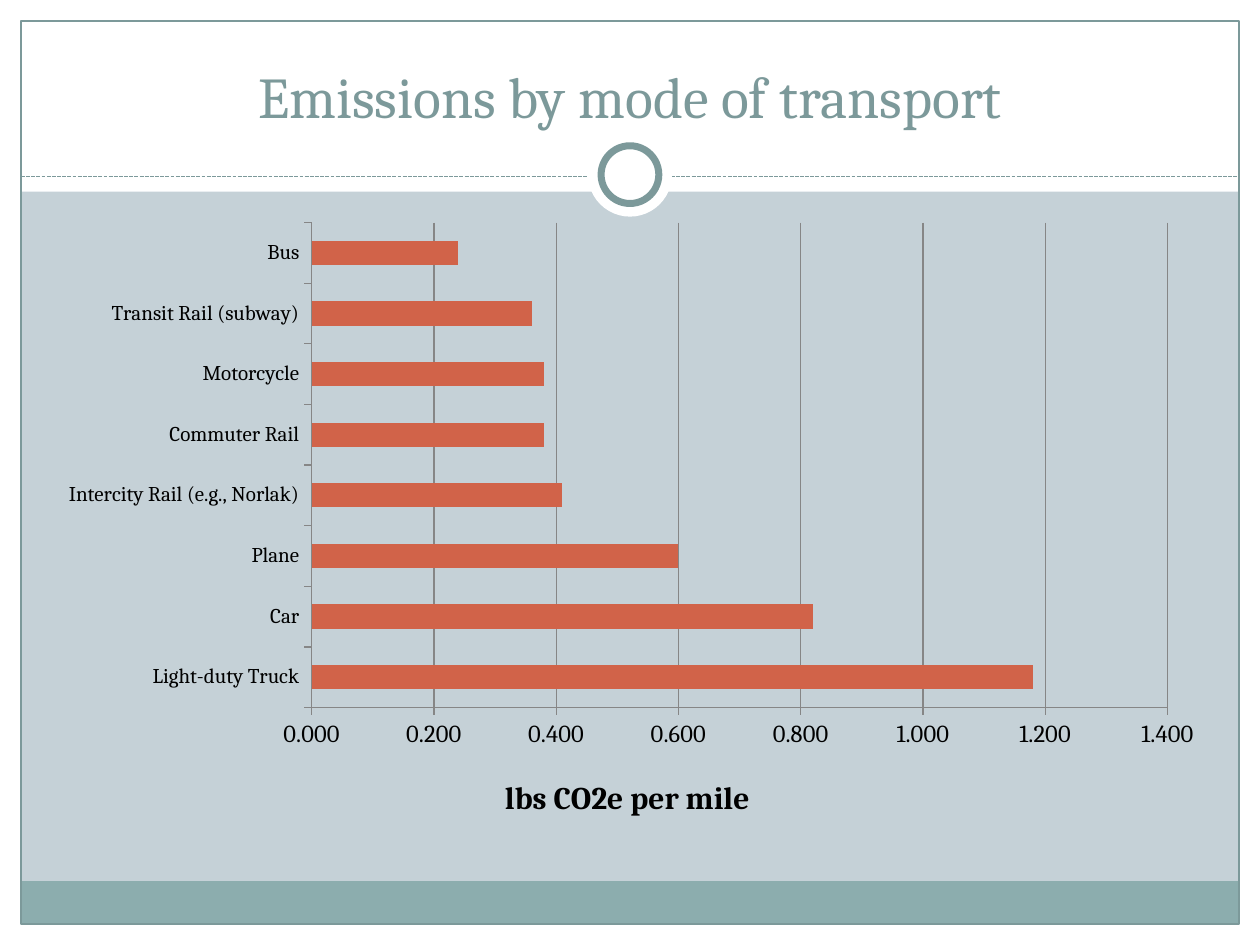
from lxml import etree
from pptx import Presentation
from pptx import util as u
from pptx.chart.data import CategoryChartData
from pptx.dml.color import RGBColor
from pptx.enum import chart as ch, dml, shapes, text
from pptx.oxml import ns

COLORS = {"back": "C5D1D7", "white": "FFFFFF", "band": "8CADAE", "trim": "7C999A",
          "bar": "D16349", "axis": "868686", "black": "000000"}
FONT = "Cambria"
W, H, MARGIN = 720, 540, 12
EMISSIONS = [("Light-duty Truck", 1.18), ("Car", 0.82), ("Plane", 0.6),
             ("Intercity Rail (e.g., Norlak)", 0.41), ("Commuter Rail", 0.38),
             ("Motorcycle", 0.38), ("Transit Rail (subway)", 0.36), ("Bus", 0.24)]


def rgb(name):
    """Return the named colour."""
    return RGBColor.from_string(COLORS[name])


def style_font(font, size, color="black", bold=False):
    """Format a font."""
    font.name, font.size, font.bold = FONT, u.Pt(size), bold
    font.color.rgb = rgb(color)


def style_line(line, color, width=0.75):
    """Format a line."""
    line.color.rgb = rgb(color)
    line.width = u.Pt(width)


def put_text(tf, words, align=text.PP_ALIGN.CENTER, **fmt):
    """Write one formatted paragraph into a text frame."""
    tf.text = words
    p = tf.paragraphs[0]
    p.alignment = align
    style_font(p.runs[0].font, **fmt)


def add_shape(s, kind, box, fill=None, line=None, width=0.75):
    """Add a preset shape without shadow."""
    sp = s.shapes.add_shape(kind, *map(u.Pt, box))
    sp.shadow.inherit = False
    if fill:
        sp.fill.solid()
        sp.fill.fore_color.rgb = rgb(fill)
    else:
        sp.fill.background()
    if line:
        style_line(sp.line, line, width)
    else:
        sp.line.fill.background()
    return sp


def add_frame(s, box, head, foot):
    """Draw the white border, the foot band and the outline around a box."""
    x, y, w, h = box
    rect = shapes.MSO_SHAPE.RECTANGLE
    for edge in [(0, y + h, W, y), (0, 0, W, head), (0, 0, x, H), (x + w, 0, x, H)]:
        add_shape(s, rect, edge, fill="white")
    add_shape(s, rect, (x, y + h - foot, w, foot), fill="band")
    add_shape(s, rect, box, line="trim")


def add_divider(s, x, y, w):
    """Draw the dashed rule with a ring at its middle."""
    c = s.shapes.add_connector(shapes.MSO_CONNECTOR.STRAIGHT,
                               *map(u.Pt, (x, y, x + w, y)))
    style_line(c.line, "trim")
    c.line.dash_style = dml.MSO_LINE.SQUARE_DOT
    etree.SubElement(c.element.spPr, ns.qn("a:effectLst"))
    cx, cy = x + w / 2, y - 1.2
    for d, line in ((48, None), (33, "trim")):
        add_shape(s, shapes.MSO_SHAPE.OVAL, (cx - d / 2, cy - d / 2, d, d),
                  fill="white", line=line, width=4)


def add_title(s, box, words):
    """Place the title placeholder above the frame."""
    sp = s.shapes.title
    sp.left, sp.top, sp.width, sp.height = map(u.Pt, box)
    sp.text_frame.vertical_anchor = text.MSO_ANCHOR.BOTTOM
    put_text(sp.text_frame, words, size=33, color="trim")
    sp.element.getparent().append(sp.element)


def set_layout(parent, index, **values):
    """Give a chart part a fixed place, in fractions of the chart."""
    layout = parent.find(ns.qn("c:layout"))
    if layout is None:
        layout = etree.Element(ns.qn("c:layout"))
        parent.insert(index, layout)
    manual = etree.SubElement(layout, ns.qn("c:manualLayout"))
    for tag, val in values.items():
        etree.SubElement(manual, ns.qn("c:" + tag)).set("val", str(val))


def add_emissions_chart(s, box):
    """Add the bar chart of emissions."""
    data = CategoryChartData(number_format="0.000")
    data.categories = [name for name, _ in EMISSIONS]
    data.add_series("Series 1", [val for _, val in EMISSIONS])
    chart = s.shapes.add_chart(ch.XL_CHART_TYPE.BAR_CLUSTERED, *map(u.Pt, box), data).chart
    chart.has_legend = chart.has_title = False
    style_font(chart.font, 10)
    plot = chart.plots[0]
    plot.gap_width, plot.vary_by_categories = 150, False
    fill = plot.series[0].format.fill
    fill.solid()
    fill.fore_color.rgb = rgb("bar")

    cat, val = chart.category_axis, chart.value_axis
    for axis, size in ((cat, 12), (val, 14)):
        axis.major_tick_mark = ch.XL_TICK_MARK.OUTSIDE
        axis.minor_tick_mark = ch.XL_TICK_MARK.NONE
        style_font(axis.tick_labels.font, size)
        style_line(axis.format.line, "axis")
    val.minimum_scale, val.maximum_scale, val.major_unit = 0, 1.4, 0.2
    val.tick_labels.number_format = "0.000"
    val.tick_labels.number_format_is_linked = False
    val.has_major_gridlines = True
    style_line(val.major_gridlines.format.line, "axis")
    put_text(val.axis_title.text_frame, "lbs CO2e per mile", size=18, bold=True)
    set_layout(val.axis_title._element, 1, xMode="edge", yMode="edge", x=0.39, y=0.89)
    set_layout(plot._element.getparent(), 0, layoutTarget="inner", xMode="edge",
               yMode="edge", x=0.23, y=0.02, w=0.73, h=0.77)


def main():
    """Build and save the slide."""
    prs = Presentation()
    prs.slide_width, prs.slide_height = u.Pt(W), u.Pt(H)
    s = prs.slides.add_slide(prs.slide_layouts[5])
    s.background.fill.solid()
    s.background.fill.fore_color.rgb = rgb("back")
    inner = W - 2 * MARGIN
    add_frame(s, (MARGIN, MARGIN, inner, H - 2 * MARGIN), head=109.5, foot=24.5)
    add_divider(s, MARGIN, 101, inner)
    add_title(s, (24, 18, 672, 60), "Emissions by mode of transport")
    add_emissions_chart(s, (24, 120, 670, 360))
    prs.save("out.pptx")


if __name__ == "__main__":
    main()
